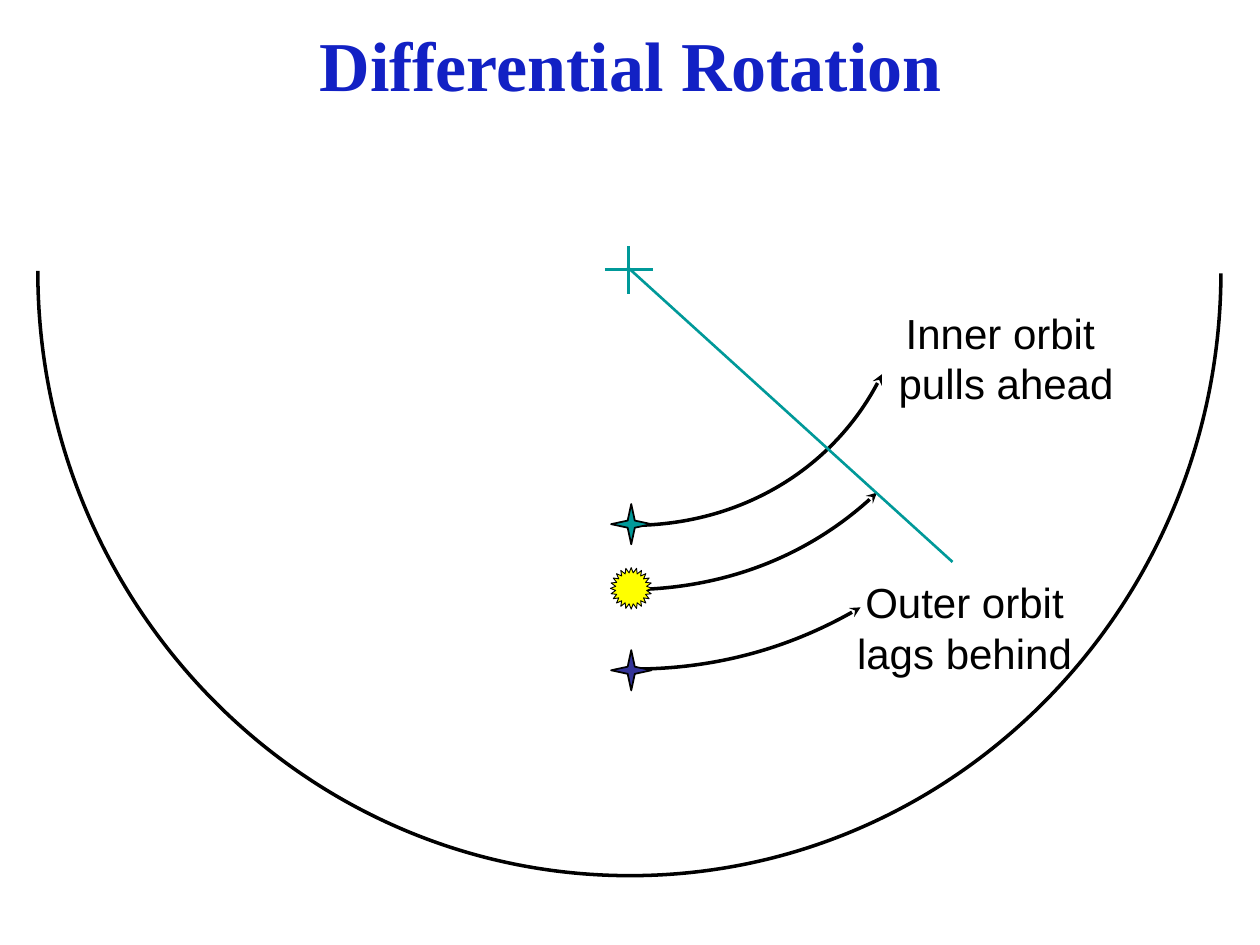
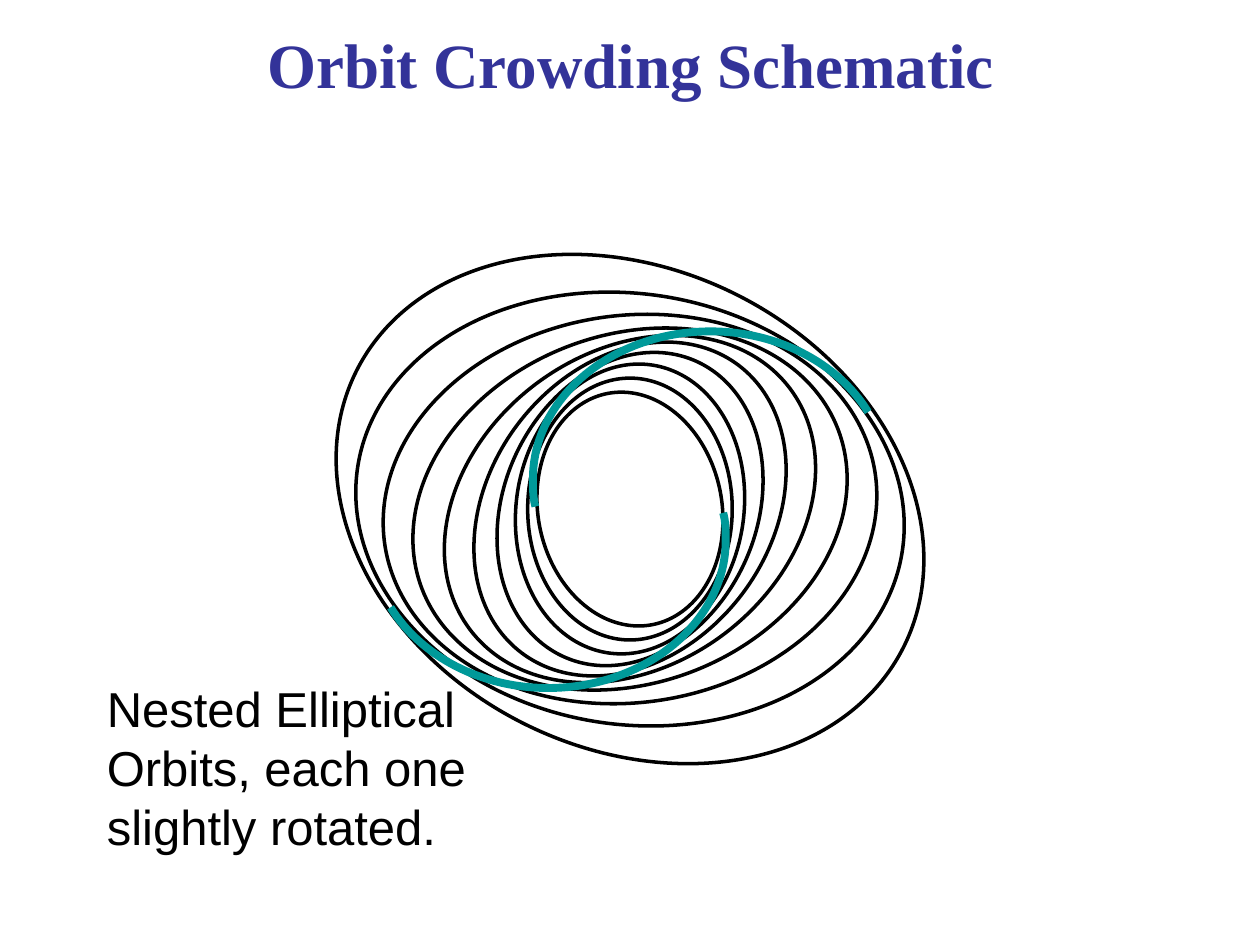
from lxml.etree import SubElement
from pptx import Presentation
from pptx.dml.color import RGBColor
from pptx.enum.shapes import MSO_CONNECTOR, MSO_SHAPE
from pptx.enum.text import MSO_ANCHOR, MSO_AUTO_SIZE, PP_ALIGN
from pptx.oxml.ns import qn
from pptx.util import Inches, Pt

COLORS = {
    "black": "000000",
    "royal": "1221C4",
    "indigo": "333399",
    "teal": "009999",
    "yellow": "FFFF00",
}
TITLE_FONT, LABEL_FONT = "Times New Roman", "Arial"
TITLE_BOX = (0.17, 0.17, 9.67, 0.67)
TITLE_ONLY = 5


def rgb(name):
    return RGBColor.from_string(COLORS[name])


def write_text(frame, text, size, font=LABEL_FONT, color="black", bold=False,
               align=PP_ALIGN.LEFT, spacing=None):
    frame.text = text
    for paragraph in frame.paragraphs:
        paragraph.alignment = align
        if spacing:
            paragraph.line_spacing = Pt(size * spacing)
        for run in paragraph.runs:
            run.font.size = Pt(size)
            run.font.name = font
            run.font.bold = bold
            run.font.color.rgb = rgb(color)


class Deck:
    def __init__(self):
        self.prs = Presentation()
        self.prs.slide_width, self.prs.slide_height = Inches(10), Inches(7.5)
        self.slide = None

    def new_slide(self, title, size, color):
        self.slide = self.prs.slides.add_slide(self.prs.slide_layouts[TITLE_ONLY])
        heading = self.slide.shapes.title
        heading.left, heading.top, heading.width, heading.height = map(Inches, TITLE_BOX)
        frame = heading.text_frame
        frame.vertical_anchor = MSO_ANCHOR.MIDDLE
        frame.auto_size = MSO_AUTO_SIZE.NONE
        write_text(frame, title, size, TITLE_FONT, color, True, PP_ALIGN.CENTER)

    def outline(self, shape, color, width):
        shape.line.color.rgb = rgb(color)
        shape.line.width = Pt(width)

    def label(self, text, box, size, align=PP_ALIGN.LEFT):
        frame = self.slide.shapes.add_textbox(*map(Inches, box)).text_frame
        frame.word_wrap = False
        frame.auto_size = MSO_AUTO_SIZE.SHAPE_TO_FIT_TEXT
        write_text(frame, text, size, align=align, spacing=1.2)

    def line(self, start, end, color, width):
        connector = self.slide.shapes.add_connector(
            MSO_CONNECTOR.STRAIGHT, *map(Inches, (*start, *end)))
        self.outline(connector, color, width)
        SubElement(connector._element.spPr, qn("a:effectLst"))
        return connector

    def shape(self, kind, center, width, height, fill=None, stroke=2, depth=None, rotation=0):
        x, y = center
        shape = self.slide.shapes.add_shape(
            kind, Inches(x - width / 2), Inches(y - height / 2), Inches(width), Inches(height))
        shape.shadow.inherit = False
        shape.rotation = rotation
        if depth:
            shape.adjustments[0] = depth
        if fill:
            shape.fill.solid()
            shape.fill.fore_color.rgb = rgb(fill)
        else:
            shape.fill.background()
        self.outline(shape, "black", stroke)

    def curve(self, points, color="black", width=2, arrow=False):
        start, *rest = [(Inches(x), Inches(y)) for x, y in points]
        builder = self.slide.shapes.build_freeform(*start)
        builder.add_line_segments(rest, close=False)
        shape = builder.convert_to_shape()
        segments = list(shape._element.iter(qn("a:lnTo")))
        for i in range(0, len(segments), 3):
            bezier = SubElement(segments[i].getparent(), qn("a:cubicBezTo"))
            for segment in segments[i:i + 3]:
                bezier.append(segment[0])
                segment.getparent().remove(segment)
        shape.shadow.inherit = False
        shape.fill.background()
        self.outline(shape, color, width)
        if arrow:
            SubElement(shape.line._get_or_add_ln(), qn("a:headEnd"), type="stealth")
        return shape

    def group(self, members):
        self.slide.shapes.add_group_shape(members)


def differential_rotation(deck):
    deck.new_slide("Differential Rotation", 40, "royal")
    deck.curve([(9.69, 2.17), (9.68, 4.81), (7.58, 6.95), (5, 6.95),
                (2.41, 6.95), (0.3, 4.8), (0.3, 2.15)])

    x, y, arm = 4.99, 2.14, 0.19
    deck.group([deck.line((x - arm, y), (x + arm, y), "teal", 2),
                deck.line((x, y + arm), (x, y - arm), "teal", 2)])

    inner_path = [(7, 2.97), (6.65, 3.7), (5.87, 4.17), (5.01, 4.17)]
    sun_path = [(6.96, 3.91), (6.45, 4.4), (5.75, 4.67), (5.02, 4.68)]
    outer_path = [(6.83, 4.82), (6.29, 5.14), (5.66, 5.31), (5.02, 5.31)]
    for orbit in (inner_path, sun_path, outer_path):
        deck.curve(orbit, arrow=True)

    deck.label("Inner orbit \npulls ahead", (7.03, 2.39, 1.91, 0.9), 24, PP_ALIGN.CENTER)
    deck.label("Outer orbit\nlags behind", (6.7, 4.53, 1.91, 0.9), 24, PP_ALIGN.CENTER)
    deck.line((4.98, 2.12), (7.56, 4.46), "teal", 1.5)

    for star_y, fill in ((4.16, "teal"), (5.32, "indigo")):
        deck.shape(MSO_SHAPE.STAR_4_POINT, (5.01, star_y), 0.32, 0.32, fill, 1, 0.125)
    deck.shape(MSO_SHAPE.STAR_24_POINT, (5.01, 4.67), 0.33, 0.33, "yellow", 0.5, 0.375)


def orbit_crowding(deck):
    deck.new_slide("Orbit Crowding Schematic", 36, "indigo")
    rotations = (117, 99, 82, 69, 53, 37, 24, 9, 0, 349)
    widest, narrowest, elongation = 3.8, 1.46, 1.28
    shrink = (narrowest / widest) ** (1 / (len(rotations) - 1))
    for i, rotation in enumerate(rotations):
        width = widest * shrink ** i
        deck.shape(MSO_SHAPE.OVAL, (5, 4.04), width, width * elongation, rotation=rotation)

    deck.label("Nested Elliptical\nOrbits, each one\nslightly rotated.",
               (0.75, 5.34, 3.06, 1.5), 28)

    upper_arm = [(4.25, 4.02), (4.23, 3.95), (4.23, 3.88), (4.23, 3.8), (4.23, 3.16),
                 (4.86, 2.63), (5.64, 2.63), (6.17, 2.63), (6.65, 2.88), (6.89, 3.27)]
    lower_arm = [(9.99 - x, 8.09 - y) for x, y in upper_arm]
    deck.group([deck.curve(arm, "teal", 4.5) for arm in (upper_arm, lower_arm)])


def main():
    deck = Deck()
    differential_rotation(deck)
    orbit_crowding(deck)
    deck.prs.save("out.pptx")


if __name__ == "__main__":
    main()
